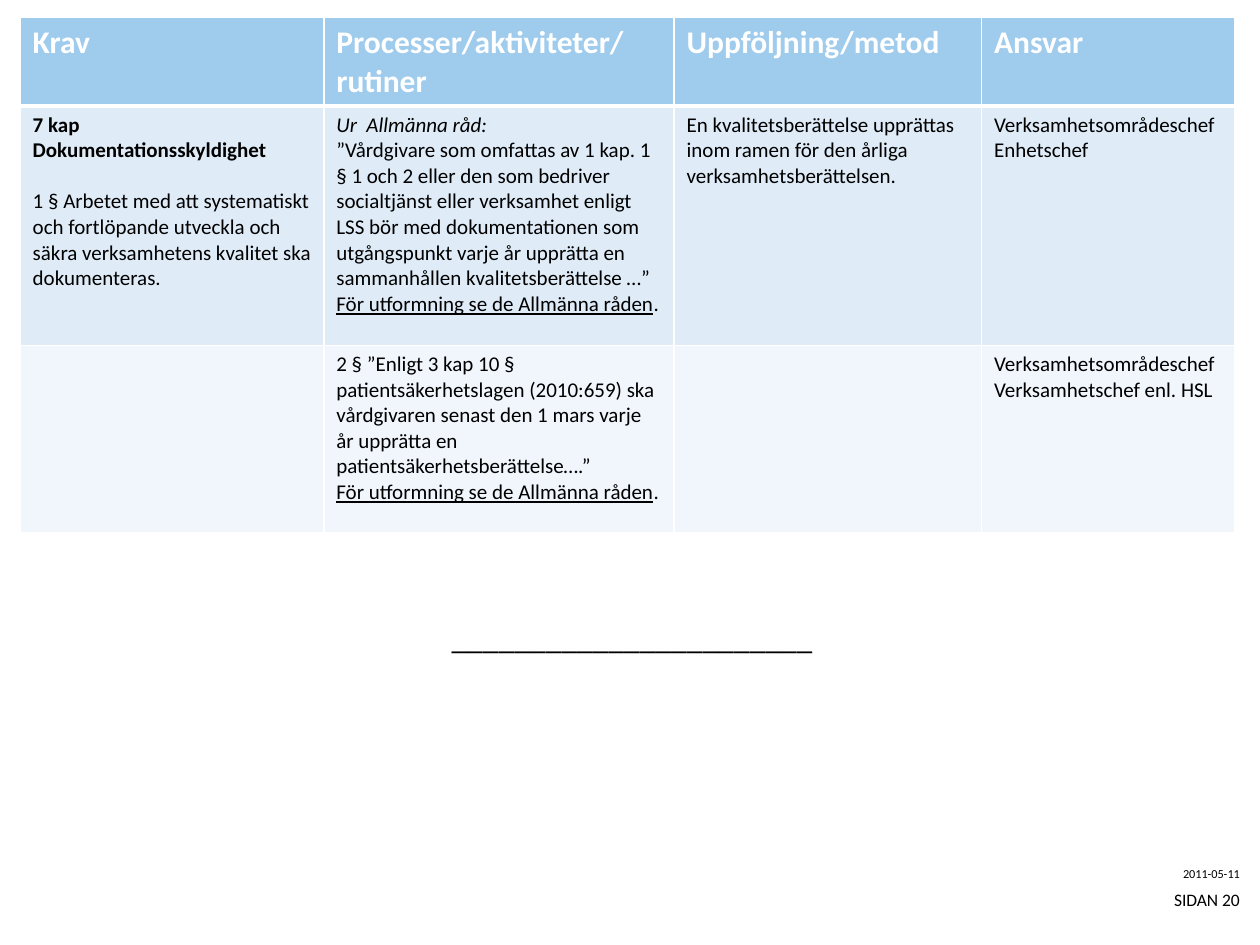
from lxml.etree import SubElement
from pptx import Presentation
from pptx.dml.color import RGBColor
from pptx.enum.text import MSO_ANCHOR, PP_ALIGN
from pptx.oxml.ns import qn
from pptx.util import Inches, Pt

FONT = "Calibri"
COLORS = {
    "header": "9FCBED",
    "odd": "DFECF8",
    "even": "F0F6FC",
    "white": "FFFFFF",
    "text": "000000",
}
COLUMN_WIDTHS = [2.41, 2.78, 2.44, 2.01]
ROW_HEIGHTS = [0.69, 1.9, 1.49]
ROW_FILLS = ["header", "odd", "even"]
PARAGRAPH_GAP = 14.6

HEADINGS = ["Krav", "Processer/aktiviteter/rutiner", "Uppföljning/metod", "Ansvar"]
GUIDANCE = [("För utformning se de Allmänna råden", "underline"), (".", "")]
BODY = [
    [
        [
            [("7 kap Dokumentationsskyldighet", "bold")],
            [("1 § Arbetet med att systematiskt och fortlöpande utveckla och "
              "säkra verksamhetens kvalitet ska dokumenteras.", "")],
        ],
        [
            [("Ur  Allmänna råd:", "italic")],
            [("”Vårdgivare som omfattas av 1 kap. 1 § 1 och 2 eller den som "
              "bedriver socialtjänst eller verksamhet enligt LSS bör med "
              "dokumentationen som utgångspunkt varje år upprätta en "
              "sammanhållen kvalitetsberättelse …”", "")],
            GUIDANCE,
        ],
        [[("En kvalitetsberättelse upprättas inom ramen för den årliga "
           "verksamhetsberättelsen.", "")]],
        [[("Verksamhetsområdeschef", "")], [("Enhetschef", "")]],
    ],
    [
        [],
        [
            [("2 § ”Enligt 3 kap 10 § patientsäkerhetslagen (2010:659) ska "
              "vårdgivaren senast den 1 mars varje år upprätta en "
              "patientsäkerhetsberättelse….”", "")],
            GUIDANCE,
        ],
        [],
        [[("Verksamhetsområdeschef", "")], [("Verksamhetschef enl. HSL", "")]],
    ],
]


def color(name):
    return RGBColor.from_string(COLORS[name])


def add_run(paragraph, text, size, color_name="text", style=""):
    run = paragraph.add_run()
    run.text = text
    font = run.font
    font.name = FONT
    font.size = Pt(size)
    font.color.rgb = color(color_name)
    font.bold = style == "bold"
    font.italic = style == "italic"
    font.underline = style == "underline"


def fill_text(text_frame, paragraphs, size, color_name="text"):
    for index, runs in enumerate(paragraphs):
        paragraph = text_frame.add_paragraph() if index else text_frame.paragraphs[0]
        for text, style in runs:
            add_run(paragraph, text, size, color_name, style)


def set_borders(cell, bottom_width):
    properties = cell._tc.get_or_add_tcPr()
    for side, width in (("L", 1), ("R", 1), ("T", 1), ("B", bottom_width)):
        line = SubElement(properties, qn(f"a:ln{side}"), w=str(Pt(width)))
        fill = SubElement(line, qn("a:solidFill"))
        SubElement(fill, qn("a:srgbClr"), val=COLORS["white"])


def add_requirements_table(slide):
    rows = [[[[(heading, "bold")]] for heading in HEADINGS]] + BODY
    table = slide.shapes.add_table(
        len(rows), len(HEADINGS), Inches(0.16), Inches(0.14),
        Inches(sum(COLUMN_WIDTHS)), Inches(sum(ROW_HEIGHTS)),
    ).table
    for column, width in zip(table.columns, COLUMN_WIDTHS):
        column.width = Inches(width)
    for row_index, row in enumerate(rows):
        is_header = row_index == 0
        table.rows[row_index].height = Inches(ROW_HEIGHTS[row_index])
        for column_index, paragraphs in enumerate(row):
            cell = table.cell(row_index, column_index)
            set_borders(cell, 3 if is_header else 1)
            cell.fill.solid()
            cell.fill.fore_color.rgb = color(ROW_FILLS[row_index])
            fill_text(cell.text_frame, paragraphs, 18 if is_header else 12,
                      "white" if is_header else "text")
    table.cell(1, 0).text_frame.paragraphs[1].space_before = Pt(PARAGRAPH_GAP)


def add_label(slide, text, size, box, alignment):
    shape = slide.shapes.add_textbox(*(Inches(length) for length in box))
    text_frame = shape.text_frame
    text_frame.word_wrap = True
    fill_text(text_frame, [[(text, "")]], size)
    text_frame.paragraphs[0].alignment = alignment
    return text_frame


def add_footer(slide, text, size, top):
    text_frame = add_label(slide, text, size, (8.8, top, 1.04, 0.19), PP_ALIGN.RIGHT)
    text_frame.vertical_anchor = MSO_ANCHOR.MIDDLE
    text_frame.margin_left = text_frame.margin_right = 0
    text_frame.margin_top = text_frame.margin_bottom = 0


def main():
    presentation = Presentation()
    presentation.slide_width = Inches(10)
    presentation.slide_height = Inches(7.5)
    slide = presentation.slides.add_slide(presentation.slide_layouts[6])
    add_footer(slide, "2011-05-11", 7, 6.84)
    add_footer(slide, "SIDAN 20", 10, 7.04)
    add_requirements_table(slide)
    add_label(slide, "_" * 23, 18, (3.24, 4.86, 3.55, 0.4), PP_ALIGN.CENTER)
    presentation.save("out.pptx")


if __name__ == "__main__":
    main()
